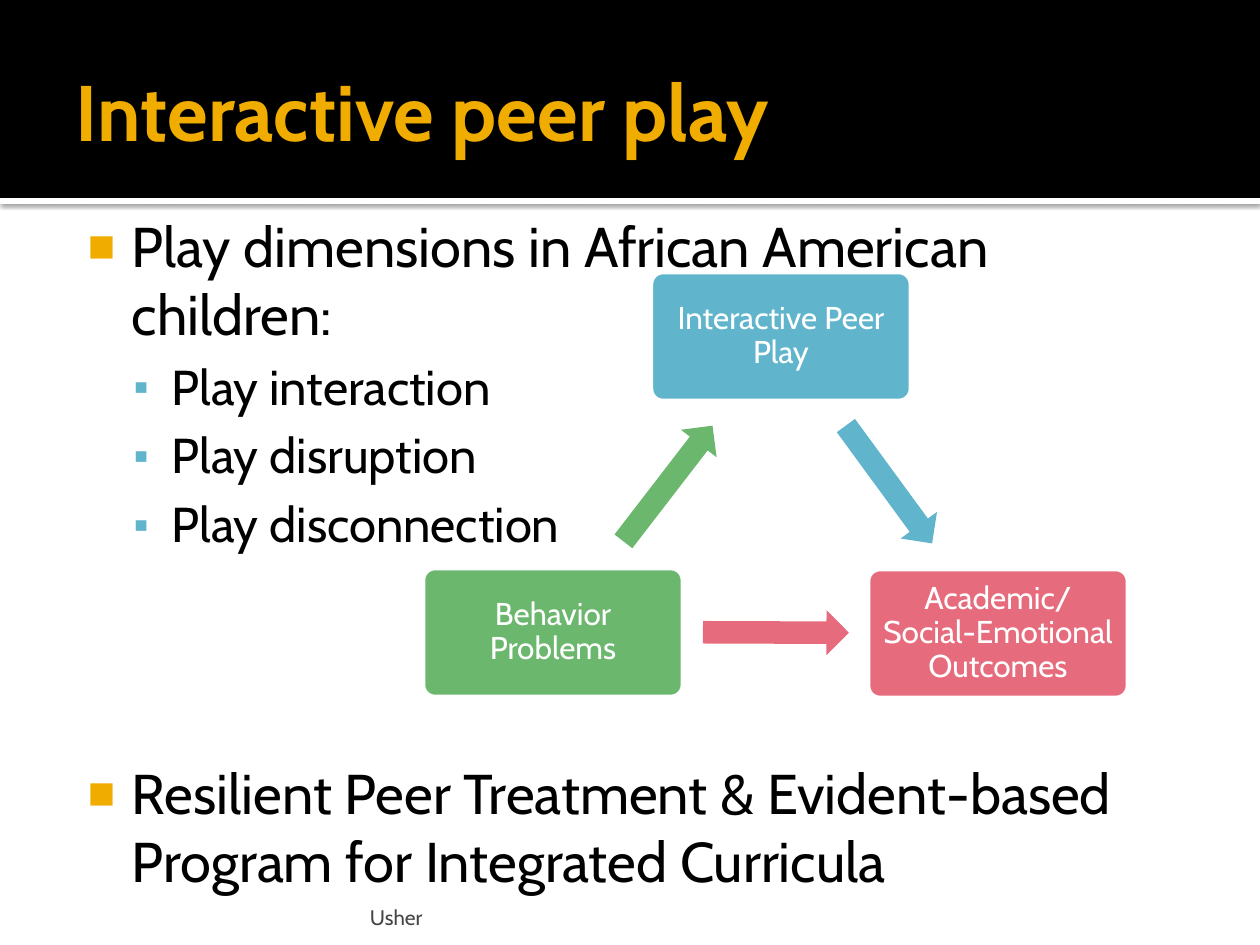
from lxml import etree
from pptx import Presentation, util as u
from pptx.dml.color import RGBColor
from pptx.enum import shapes, text
from pptx.oxml.ns import qn

BLACK = RGBColor(0, 0, 0)
WHITE = RGBColor(255, 255, 255)
GOLD = RGBColor(0xF0, 0xAD, 0x00)
BLUE = RGBColor(0x60, 0xB5, 0xCC)
ROSE = RGBColor(0xE6, 0x6C, 0x7D)
GREEN = RGBColor(0x6B, 0xB7, 0x6D)
GREY = RGBColor(0x45, 0x45, 0x45)
PX = u.Inches(1) / 126
KIND = shapes.MSO_SHAPE


def block(kind, box, fill):
    """Add a filled preset shape without line or shadow."""
    shape = slide.shapes.add_shape(kind, *[round(n * PX) for n in box])
    shape.shadow.inherit = False
    shape.fill.solid()
    shape.fill.fore_color.rgb = fill
    shape.line.fill.background()
    return shape


def style(frame, size, color, pads, anchor):
    """Format all the text of a frame; pads are left, top, right, bottom."""
    frame.word_wrap = True
    frame.auto_size = text.MSO_AUTO_SIZE.NONE
    frame.vertical_anchor = anchor
    for side, pad in zip(("left", "top", "right", "bottom"), pads):
        setattr(frame, "margin_" + side, round(pad * PX))
    for para in frame.paragraphs:
        for run in para.runs:
            run.font.name = "Cabin"
            run.font.size = u.Pt(size)
            run.font.color.rgb = color


deck = Presentation()
deck.slide_width, deck.slide_height = u.Inches(10), u.Inches(7.5)
slide = deck.slides.add_slide(deck.slide_layouts[5])
title = slide.shapes.title

# Header band, with a white strip that casts a shadow
strip = block(KIND.RECTANGLE, (0, 198, 1260, 6), WHITE)
cast = etree.SubElement(
    strip._element.spPr.find(qn("a:effectLst")), qn("a:outerShdw"),
    blurRad=str(u.Pt(2.5)), dist=str(u.Pt(0.8)), dir="5400000",
    algn="tl", rotWithShape="0")
tint = etree.SubElement(cast, qn("a:srgbClr"), val=str(BLACK))
etree.SubElement(tint, qn("a:alpha"), val="60000")
band = block(KIND.RECTANGLE, (0, 0, 1260, 198), BLACK)
title._element.addprevious(strip._element)
title._element.addprevious(band._element)

title.left, title.top, title.width, title.height = [
    round(n * PX) for n in (63, 31, 1134, 158)]
title.text_frame.text = "Interactive peer play"
style(title.text_frame, 45, GOLD, (13, 6, 6, 6), text.MSO_ANCHOR.MIDDLE)
head = title.text_frame.paragraphs[0]
head.alignment = text.PP_ALIGN.LEFT
head.runs[0].font.bold = True

# Bulleted list; the wide gap leaves room for the cycle
lines = [
    (0, 0, "Play dimensions in African American children:"),
    (1, 5.6, "Play interaction"),
    (1, 5.6, "Play disruption"),
    (1, 5.6, "Play disconnection"),
    (0, 118, "Resilient Peer Treatment & Evident-based Program for "
             "Integrated Curricula"),
]
levels = [(61, 44, "■", GOLD, 52, 32), (101, 38, "▪", BLUE, 75, 28)]
body = slide.shapes.add_textbox(
    *[round(n * PX) for n in (63, 199, 1134, 703)]).text_frame
body.text = "\n".join(line[2] for line in lines)
style(body, 32, BLACK, (8, 13, 13, 6), text.MSO_ANCHOR.TOP)
for para, (level, gap, _) in zip(body.paragraphs, lines):
    left, hang, mark, color, scale, size = levels[level]
    props = para._p.get_or_add_pPr()
    props.set("marL", str(round(left * PX)))
    props.set("indent", str(round(-hang * PX)))
    hue = etree.SubElement(props, qn("a:buClr"))
    etree.SubElement(hue, qn("a:srgbClr"), val=str(color))
    etree.SubElement(props, qn("a:buSzPct"), val=str(scale * 1000))
    etree.SubElement(props, qn("a:buFont"), typeface="Cabin")
    etree.SubElement(props, qn("a:buChar"), char=mark)
    para.level = level
    if gap:
        para.space_before = u.Pt(gap)
    para.runs[0].font.size = u.Pt(size)

foot = slide.shapes.add_textbox(
    *[round(n * PX) for n in (364, 892, 759, 38)]).text_frame
foot.text = "Usher"
style(foot, 12, GREY, (6, 6, 6, 0), text.MSO_ANCHOR.BOTTOM)

# Cycle: each box is followed by the arrow that leaves it
cycle = [
    ("Interactive Peer Play", BLUE, (650, 271), (816, 462), 53.8),
    ("Academic/Social-Emotional Outcomes", ROSE, (867, 568), (703, 610), 0.2),
    ("Behavior Problems", GREEN, (422, 567), (595, 461), 307.6),
]
for label, color, spot, start, angle in cycle:
    card = block(KIND.ROUNDED_RECTANGLE, (*spot, 262, 131), color)
    card.adjustments[0] = 0.1
    card.line.color.rgb = WHITE
    card.line.width = u.Pt(3.78)
    card.text_frame.text = label
    style(card.text_frame, 18, WHITE, (9, 9, 9, 9),
          text.MSO_ANCHOR.MIDDLE)
    para = card.text_frame.paragraphs[0]
    para.alignment = text.PP_ALIGN.CENTER
    para.line_spacing = 0.9
    arrow = block(KIND.RIGHT_ARROW, (*start, 146, 45), color)
    arrow.rotation = angle

deck.save("out.pptx")
